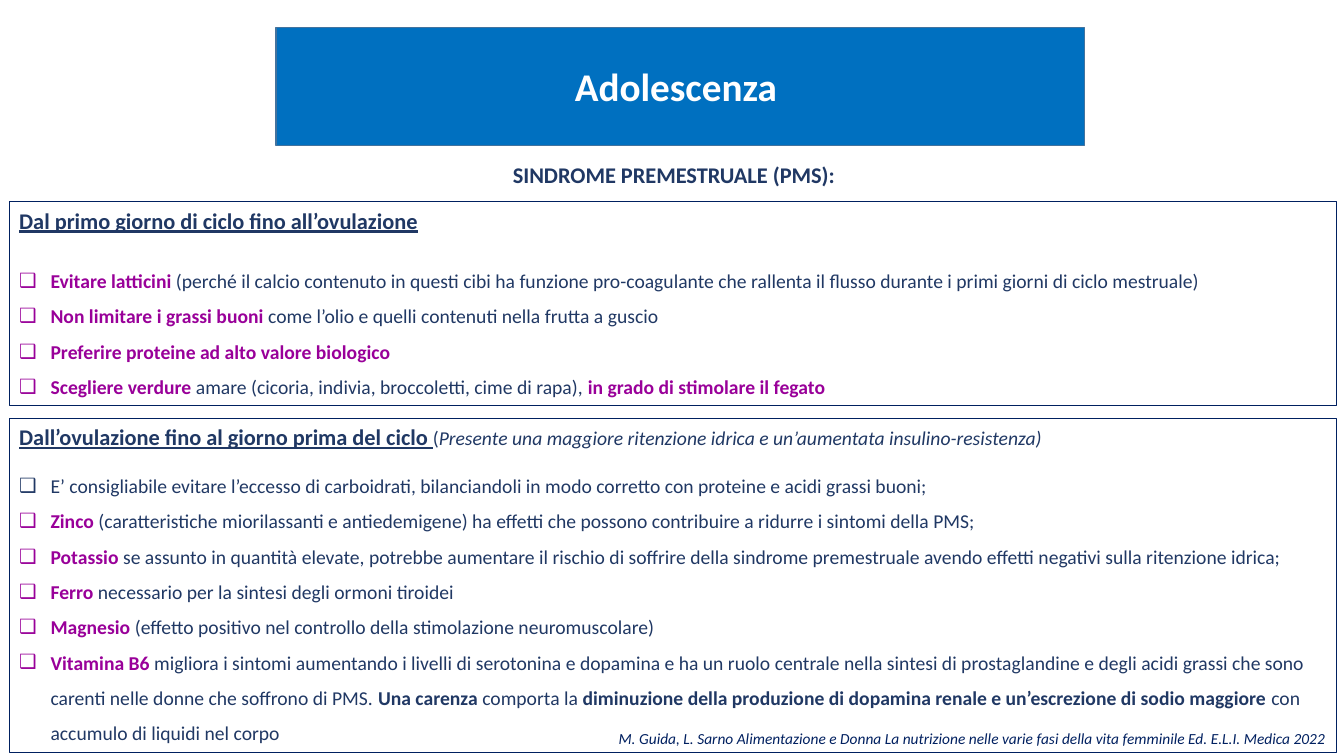
"""Build the slide on nutrition and premenstrual syndrome in adolescence."""
from lxml import etree
from pptx import Presentation
from pptx import util as u
from pptx.dml.color import RGBColor
from pptx.enum import text
from pptx.oxml import ns

TITLE = "Adolescenza "
SUBTITLE = "SINDROME PREMESTRUALE (PMS):"
SOURCE = ("M. Guida, L. Sarno Alimentazione e Donna La nutrizione nelle varie fasi "
          "della vita femminile Ed. E.L.I. Medica 2022")

PHASES = [
    {
        "top": 5.08, "height": 5.13, "first_spacing": 1.5,
        "heading": [("Dal primo giorno di ciclo fino all’ovulazione", "heading")],
        "items": [
            [("Evitare latticini ", "key"),
             ("(perché il calcio contenuto in questi cibi ha funzione pro-coagulante che "
              "rallenta il flusso durante i primi giorni di ciclo mestruale)", "plain")],
            [("Non limitare i grassi buoni ", "key"),
             ("come l’olio e quelli contenuti nella frutta a guscio", "plain")],
            [("Preferire proteine ad alto valore biologico", "key")],
            [("Scegliere verdure ", "key"),
             ("amare (cicoria, indivia, broccoletti, cime di rapa), ", "plain"),
             ("in grado di stimolare il fegato", "key")],
        ],
    },
    {
        "top": 10.54, "height": 8.43, "first_spacing": 1.0,
        "heading": [("Dall’ovulazione fino al giorno prima del ciclo", "heading"),
                    (" ", "underlined"), ("(", "plain"),
                    ("Presente una maggiore ritenzione idrica e un’aumentata "
                     "insulino-resistenza)", "italic")],
        "items": [
            [("E’ consigliabile evitare l’eccesso di carboidrati, bilanciandoli in modo "
              "corretto con proteine e acidi grassi buoni;", "plain")],
            [("Zinco ", "key"),
             ("(caratteristiche miorilassanti e antiedemigene) ha effetti che possono "
              "contribuire a ridurre i sintomi della PMS;", "plain")],
            [("Potassio ", "key"),
             ("se assunto in quantità elevate, potrebbe aumentare il rischio di soffrire della "
              "sindrome premestruale avendo effetti negativi sulla ritenzione idrica;", "plain")],
            [("Ferro ", "key"), ("necessario per la sintesi degli ormoni tiroidei", "plain")],
            [("Magnesio ", "key"),
             ("(effetto positivo nel controllo della stimolazione neuromuscolare)", "plain")],
            [("Vitamina B6 ", "key"),
             ("migliora i sintomi aumentando i livelli di serotonina e dopamina e ha un ruolo "
              "centrale nella sintesi di prostaglandine e degli acidi grassi che sono carenti "
              "nelle donne che soffrono di PMS. ", "plain"),
             ("Una carenza ", "strong"), ("comporta la ", "plain"),
             ("diminuzione della produzione di dopamina renale e un’escrezione di sodio "
              "maggiore ", "strong"),
             ("con accumulo di liquidi nel corpo", "plain")],
        ],
    },
]

COLORS = {"blue": "0070C0", "edge": "43739E", "navy": "203864",
          "dark": "002060", "purple": "990099", "white": "FFFFFF"}
STYLES = {
    "title": (28, "white", "b"), "subtitle": (16, "navy", "b"),
    "source": (11, "dark", "i"), "heading": (16, "navy", "bu"),
    "underlined": (14, "navy", "bu"), "key": (14, "purple", "b"),
    "plain": (14, "navy", ""), "strong": (14, "navy", "b"), "italic": (14, "navy", "i"),
}
BOX_LEFT, BOX_WIDTH = 0.23, 33.45
BULLET, BULLET_INDENT = "❑", u.Cm(0.79)
HEADING_GAP = u.Pt(17)


def color(name):
    return RGBColor.from_string(COLORS[name])


def place(shape, left, top, width, height):
    shape.left, shape.top, shape.width, shape.height = map(u.Cm, (left, top, width, height))


def outline(shape, name, width):
    shape.line.color.rgb = color(name)
    shape.line.width = u.Pt(width)


def add_runs(paragraph, runs):
    for words, style in runs:
        size, name, marks = STYLES[style]
        run = paragraph.add_run()
        run.text = words
        run.font.name = "Calibri"
        run.font.size = u.Pt(size)
        run.font.color.rgb = color(name)
        run.font.bold = "b" in marks
        run.font.italic = "i" in marks
        run.font.underline = "u" in marks


def set_bullet(paragraph, character=None):
    properties = paragraph._p.get_or_add_pPr()
    indent = BULLET_INDENT if character else 0
    properties.set("marL", str(indent))
    properties.set("indent", str(-indent))
    tag = "a:buChar" if character else "a:buNone"
    bullet = etree.SubElement(properties, ns.qn(tag))
    if character:
        bullet.set("char", character)


def fill_phase(shape, phase):
    place(shape, BOX_LEFT, phase["top"], BOX_WIDTH, phase["height"])
    outline(shape, "dark", 0.75)
    frame = shape.text_frame
    frame.auto_size = text.MSO_AUTO_SIZE.NONE
    heading = frame.paragraphs[0]
    set_bullet(heading)
    heading.space_before = u.Pt(0)
    add_runs(heading, phase["heading"])
    for index, runs in enumerate(phase["items"]):
        paragraph = frame.add_paragraph()
        set_bullet(paragraph, BULLET)
        paragraph.line_spacing = 1.5 if index else phase["first_spacing"]
        paragraph.space_before = u.Pt(0) if index else HEADING_GAP
        add_runs(paragraph, runs)


def add_label(slide, box, words, style, alignment):
    shape = slide.shapes.add_textbox(*map(u.Cm, box))
    shape.text_frame.word_wrap = True
    paragraph = shape.text_frame.paragraphs[0]
    paragraph.alignment = alignment
    add_runs(paragraph, [(words, style)])


def main():
    presentation = Presentation()
    presentation.slide_width, presentation.slide_height = u.Cm(33.87), u.Cm(19.05)
    slide = presentation.slides.add_slide(presentation.slide_layouts[3])
    title, *bodies = slide.placeholders
    place(title, 6.96, 0.69, 20.37, 2.97)
    title.fill.solid()
    title.fill.fore_color.rgb = color("blue")
    outline(title, "edge", 1)
    title.text_frame.vertical_anchor = text.MSO_ANCHOR.MIDDLE
    heading = title.text_frame.paragraphs[0]
    heading.alignment = text.PP_ALIGN.CENTER
    add_runs(heading, [(TITLE, "title")])
    for body, phase in zip(bodies, PHASES):
        fill_phase(body, phase)
    add_label(slide, (0.1, 3.94, 33.77, 1.1), SUBTITLE, "subtitle", text.PP_ALIGN.CENTER)
    add_label(slide, (6.96, 18.24, 26.72, 0.81), SOURCE, "source", text.PP_ALIGN.RIGHT)
    presentation.save("out.pptx")


if __name__ == "__main__":
    main()
